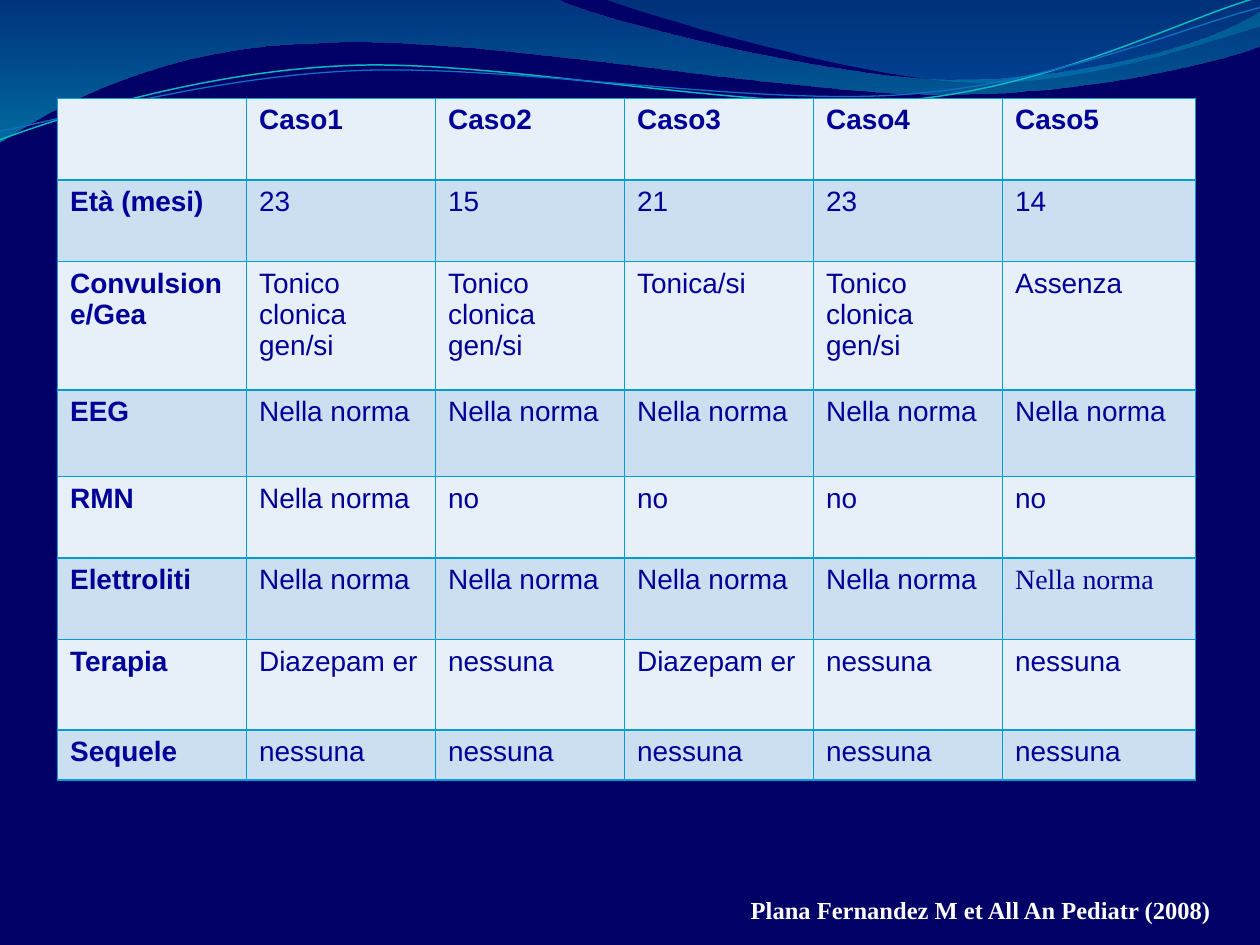
from lxml import etree
from pptx import Presentation
from pptx.dml.color import RGBColor
from pptx.oxml.ns import qn
from pptx.util import Pt

COLORS = {
    "background": "000066", "text": "000099", "source": "FFFFFF",
    "light_row": "E7EFF8", "dark_row": "CCDFF1", "border": "009DD9",
    "teal": "0AB8BF", "blue": "0F6FC6",
    "wide_top": "0074A1", "wide_bottom": "00C6CF",
    "right_top": "00A1A9", "right_bottom": "008BBF",
}


def rgb(name):
    return RGBColor.from_string(COLORS[name])


def draw_wave(start, segments, closed):
    """Draw an outline; a segment is a point or a cubic curve (six numbers)."""
    points = [(Pt(x), Pt(y)) for segment in segments
              for x, y in zip(segment[::2], segment[1::2])]
    builder = slide.shapes.build_freeform(Pt(start[0]), Pt(start[1]), scale=1.0)
    builder.add_line_segments(points, close=closed)
    wave = builder.convert_to_shape()
    wave.shadow.inherit = False
    # Join the three points of each curve into one Bezier segment
    steps = iter(list(wave._element.iter(qn("a:lnTo"))))
    for segment in segments:
        first = next(steps)
        if len(segment) == 6:
            first.tag = qn("a:cubicBezTo")
            for _ in range(2):
                extra = next(steps)
                first.append(extra[0])
                extra.getparent().remove(extra)
    return wave


prs = Presentation()
prs.slide_width, prs.slide_height = Pt(720), Pt(540)
slide = prs.slides.add_slide(prs.slide_layouts[6])
slide.background.fill.solid()
slide.background.fill.fore_color.rgb = rgb("background")

# Translucent bands: start, segments, gradient stops (colour, position, opacity)
bands = [
    ((0, 0),
     [(317, -0.7), (343, 12, 478, 45.4, 546, 45.4), (614, 45.4, 690, 27, 720, 6.5),
      (720.7, 26), (708, 31.7, 626, 54.7, 537, 54), (448, 54, 275, 20, 185, 24.5),
      (93, 26, 33, 60, -0.7, 81.4), (0, 0)],
     [("wide_top", 0, 45), ("wide_bottom", 1, 55)]),
    ((345, -0.7),
     [(366.5, 8, 491, 44.6, 553.7, 46.8), (616, 49.7, 692, 23, 720, 15), (720, 0),
      (345, -0.7)],
     [("right_top", 0, 30), ("right_bottom", 0.8, 45)]),
]
for start, segments, stops in bands:
    band = draw_wave(start, segments, True)
    band.line.fill.background()
    band.fill.gradient()
    band.fill.gradient_angle = 270
    for stop, (color, position, opacity) in zip(band.fill.gradient_stops, stops):
        stop.color.rgb = rgb(color)
        stop.position = position
    color_nodes = band._element.spPr.iter(qn("a:srgbClr"))
    for node, (_, _, opacity) in zip(color_nodes, stops):
        etree.SubElement(node, qn("a:alpha"), val=str(opacity * 1000))

# Thin wave lines, tilted slightly
wave_lines = [
    ((-1.4, 62.9),
     [(33.8, 51.7, 114.1, 29.4, 199.8, 29.9), (284.8, 30.3, 425.9, 67.2, 512.5, 64.8),
      (599.1, 62.3, 676.5, 25.7, 720.2, 15.6)], "teal", 0.85),
    ((-1.1, 57.9),
     [(32.9, 53.6, 118.2, 32.5, 204.1, 33), (290.6, 33.4, 428.9, 63.8, 515.5, 61.4),
      (601.5, 59.6, 678.5, 30, 721.4, 21.3)], "blue", 0.75),
]
for start, segments, color, width in wave_lines:
    wave_line = draw_wave(start, segments, False)
    wave_line.rotation = 357.3
    wave_line.fill.background()
    wave_line.line.color.rgb = rgb(color)
    wave_line.line.width = Pt(width)

# Table of cases
NORMAL, NONE, TONIC = "Nella norma", "nessuna", "Tonico clonica gen/si"
rows = [
    ["", "Caso1", "Caso2", "Caso3", "Caso4", "Caso5"],
    ["Età (mesi)", "23", "15", "21", "23", "14"],
    ["Convulsione/Gea", TONIC, TONIC, "Tonica/si", TONIC, "Assenza"],
    ["EEG"] + [NORMAL] * 5,
    ["RMN", NORMAL] + ["no"] * 4,
    ["Elettroliti"] + [NORMAL] * 5,
    ["Terapia", "Diazepam er", NONE, "Diazepam er", NONE, NONE],
    ["Sequele"] + [NONE] * 5,
]
row_heights = [46.7, 46.6, 73.5, 49.4, 46.6, 46.6, 51.7, 28.7]
column_widths = [108] * 5 + [110.2]
cases = slide.shapes.add_table(len(rows), len(column_widths), Pt(32.9), Pt(56.2),
                               Pt(sum(column_widths)), Pt(sum(row_heights))).table
for column, width in zip(cases.columns, column_widths):
    column.width = Pt(width)
for r, (values, height) in enumerate(zip(rows, row_heights)):
    cases.rows[r].height = Pt(height)
    for c, value in enumerate(values):
        cell = cases.cell(r, c)
        cell.text = value
        font = cell.text_frame.paragraphs[0].font
        font.name = "Times New Roman" if (r, c) == (5, 5) else "Arial"
        font.size = Pt(16)
        font.bold = r == 0 or c == 0
        font.color.rgb = rgb("text")
        # Borders come before the fill in the cell properties
        properties = cell._tc.get_or_add_tcPr()
        for side in ("a:lnL", "a:lnR", "a:lnT", "a:lnB"):
            border = etree.SubElement(properties, qn(side), w=str(Pt(1)))
            solid = etree.SubElement(border, qn("a:solidFill"))
            etree.SubElement(solid, qn("a:srgbClr"), val=COLORS["border"])
        cell.fill.solid()
        cell.fill.fore_color.rgb = rgb("dark_row" if r % 2 else "light_row")

# Source
source = slide.shapes.add_textbox(Pt(421.9), Pt(508), Pt(301), Pt(24.5)).text_frame
source.word_wrap = True
citation = source.paragraphs[0]
citation.text = "Plana Fernandez M et All An Pediatr (2008)"
citation.font.name = "Times New Roman"
citation.font.size = Pt(14)
citation.font.bold = True
citation.font.color.rgb = rgb("source")

prs.save("out.pptx")
